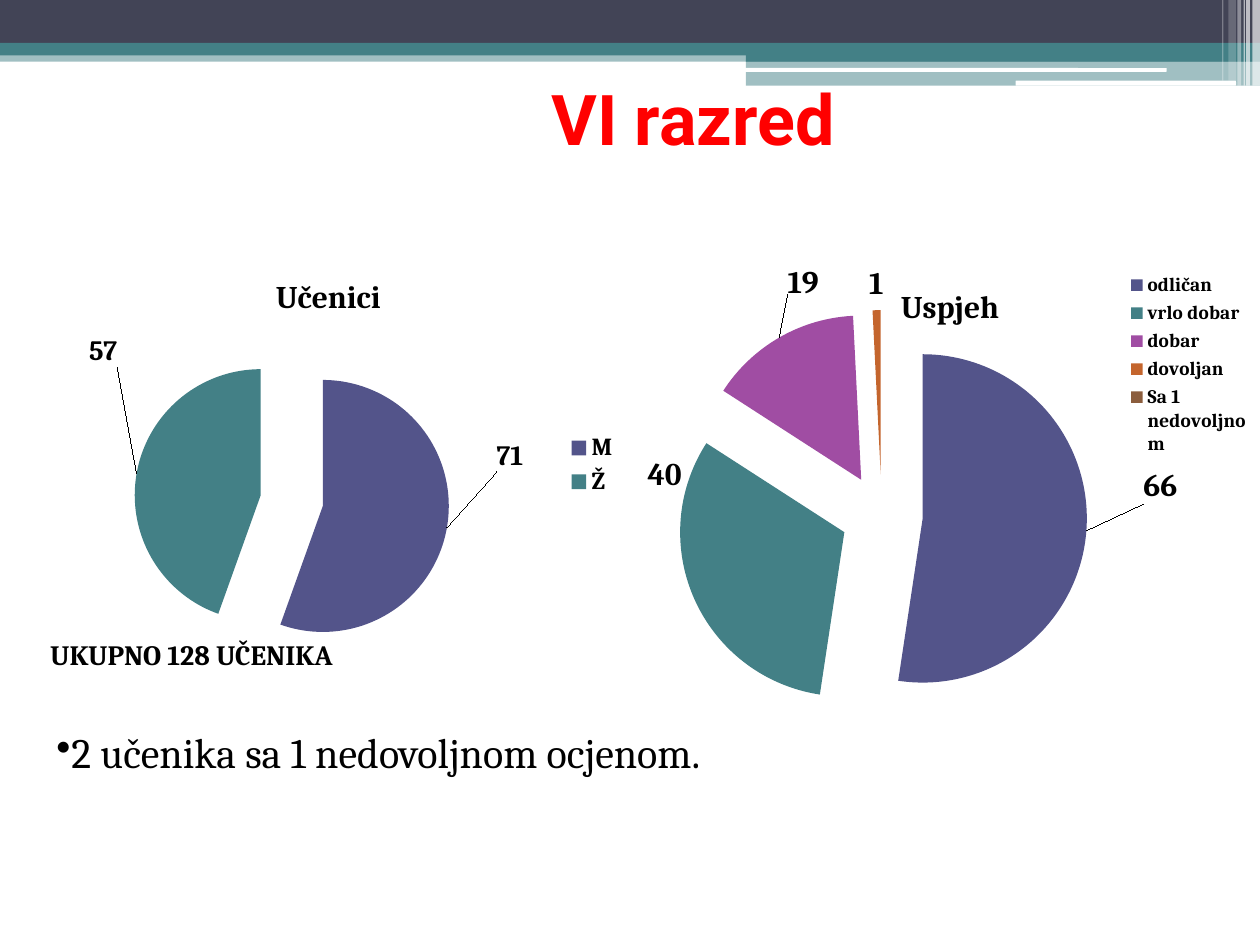
"""Build a slide comparing pupils and grades of the sixth year in two exploded pies."""
from lxml import etree
from pptx import Presentation
from pptx.chart.data import CategoryChartData
from pptx.dml.color import RGBColor
from pptx.enum.chart import XL_CHART_TYPE, XL_LABEL_POSITION, XL_LEGEND_POSITION
from pptx.enum.shapes import MSO_SHAPE
from pptx.enum.text import MSO_ANCHOR, PP_ALIGN
from pptx.oxml import parse_xml
from pptx.oxml.ns import nsdecls, qn
from pptx.util import Inches, Pt


def color(value):
    return RGBColor.from_string(value)


def place(parent, index, **settings):
    for old in parent.findall(qn("c:layout")):
        parent.remove(old)
    items = "".join(f'<c:{name} val="{value}"/>' for name, value in settings.items())
    parent.insert(index, parse_xml(
        f'<c:layout {nsdecls("c")}><c:manualLayout>{items}</c:manualLayout></c:layout>'))


deck = Presentation()
deck.slide_width = Inches(10)
deck.slide_height = Inches(7.5)
page = deck.slides.add_slide(deck.slide_layouts[6])

RECT, ROUND = MSO_SHAPE.RECTANGLE, MSO_SHAPE.ROUNDED_RECTANGLE
bands = [
    (RECT, 0, 0.4, 10, 0.09, "438086", 50),
    (RECT, 0, 0, 10, 0.34, "424456", 100),
    (RECT, 0, 0.34, 10, 0.1, "438086", 100),
    (RECT, 5.92, 0.39, 4.08, 0.1, "438086", 100),
    (RECT, 5.92, 0.48, 4.08, 0.2, "438086", 50),
    (ROUND, 5.91, 0.54, 3.35, 0.03, "FFFFFF", 100),
    (ROUND, 8.06, 0.64, 1.75, 0.04, "FFFFFF", 100),
    (RECT, 9.94, 0, 0.06, 0.68, "FFFFFF", 65),
    (RECT, 9.89, 0, 0.03, 0.68, "FFFFFF", 65),
    (RECT, 9.87, 0, 0.01, 0.68, "FFFFFF", 60),
    (RECT, 9.82, 0, 0.03, 0.68, "FFFFFF", 40),
    (RECT, 9.75, 0, 0.06, 0.64, "FFFFFF", 20),
    (RECT, 9.7, 0, 0.01, 0.64, "FFFFFF", 30),
]
for kind, left, top, width, height, fill, opacity in bands:
    band = page.shapes.add_shape(kind, Inches(left), Inches(top), Inches(width), Inches(height))
    band.shadow.inherit = False
    band.fill.solid()
    band.fill.fore_color.rgb = color(fill)
    band.line.fill.background()
    if opacity < 100:
        tint = band.fill._xPr.find(".//" + qn("a:srgbClr"))
        etree.SubElement(tint, qn("a:alpha")).set("val", str(opacity * 1000))

slice_colors = ["53548A", "438086", "A04DA3", "C4652D", "8B5D3D"]
pies = [
    dict(title="Učenici", area=(0.2, 2.02, 4.81, 3.34), plot=(0.18, 0.21, 0.52, 0.75),
         names=["M", "Ž"], values=[71, 57], label_size=16, legend_size=14, legend=None,
         shifts=[(0.07, -0.21), (-0.02, -0.25)]),
    dict(title="Uspjeh", area=(5.08, 2.1, 4.92, 3.62), plot=(0.01, 0.1, 0.76, 0.9),
         names=["odličan", "vrlo dobar", "dobar", "dovoljan", "Sa 1 nedovoljnom"],
         values=[66, 40, 19, 1, None], label_size=18, legend_size=11,
         legend=(0.78, 0.01, 0.21, 0.42),
         shifts=[(0.08, -0.1), (-0.01, -0.32), (0.07, -0.08)]),
]
for pie in pies:
    data = CategoryChartData()
    data.categories = pie["names"]
    data.add_series(pie["title"], pie["values"])
    area = [Inches(length) for length in pie["area"]]
    chart = page.shapes.add_chart(XL_CHART_TYPE.PIE, *area, data).chart
    chart.font.name = "Cambria"
    chart.font.size = Pt(10)
    chart.font.color.rgb = color("000000")

    chart.has_title = True
    chart.chart_title.text_frame.text = pie["title"]
    heading = chart.chart_title.text_frame.paragraphs[0].font
    heading.name, heading.size, heading.bold = "Cambria", Pt(18), True
    heading.color.rgb = color("000000")

    chart.has_legend = True
    chart.legend.position = XL_LEGEND_POSITION.RIGHT
    chart.legend.include_in_layout = False
    chart.legend.font.size = Pt(pie["legend_size"])
    chart.legend.font.bold = True

    chart.plots[0].vary_by_categories = True
    series = chart.plots[0].series[0]
    for index in range(len(pie["names"])):
        fill = series.points[index].format.fill
        fill.solid()
        fill.fore_color.rgb = color(slice_colors[index])

    labels = series.data_labels
    labels.show_value = True
    labels.position = XL_LABEL_POSITION.OUTSIDE_END
    moved = [series.points[index].data_label for index in range(len(pie["shifts"]))]
    for label in [labels, *moved]:
        label.font.size = Pt(pie["label_size"])
        label.font.bold = True
        label.position = XL_LABEL_POSITION.OUTSIDE_END

    root = chart._chartSpace
    explosion = etree.Element(qn("c:explosion"), val="25")
    root.find(".//" + qn("c:dPt")).addprevious(explosion)
    for element, (x, y) in zip(root.findall(".//" + qn("c:dLbl")), pie["shifts"]):
        place(element, 1, x=x, y=y)
    x, y, w, h = pie["plot"]
    place(root.find(".//" + qn("c:plotArea")), 0, layoutTarget="inner",
          xMode="edge", yMode="edge", x=x, y=y, w=w, h=h)
    if pie["legend"]:
        x, y, w, h = pie["legend"]
        place(root.find(".//" + qn("c:legend")), 1, xMode="edge", yMode="edge",
              x=x, y=y, w=w, h=h)

texts = [
    ("VI razred", 1, 0.44, 9, 0.99, "Roboto", 40, True, "FF0000", PP_ALIGN.CENTER, MSO_ANCHOR.MIDDLE),
    ("UKUPNO 128 UČENIKA", 0.3, 5.01, 3.36, 0.37, "Cambria", 16, True, "000000",
     PP_ALIGN.LEFT, MSO_ANCHOR.TOP),
    ("2 učenika sa 1 nedovoljnom ocjenom.", 0.35, 5.72, 6.64, 0.5, "Cambria", 24, False, "000000",
     PP_ALIGN.LEFT, MSO_ANCHOR.TOP),
]
for text, left, top, width, height, face, size, bold, ink, align, anchor in texts:
    box = page.shapes.add_textbox(Inches(left), Inches(top), Inches(width), Inches(height))
    box.text_frame.word_wrap = True
    box.text_frame.vertical_anchor = anchor
    para = box.text_frame.paragraphs[0]
    para.text = text
    para.alignment = align
    para.font.name, para.font.size, para.font.bold = face, Pt(size), bold
    para.font.color.rgb = color(ink)

bullet = parse_xml(f'<a:buChar {nsdecls("a")} char="•"/>')
para._p.get_or_add_pPr().insert(0, bullet)

deck.save("out.pptx")
